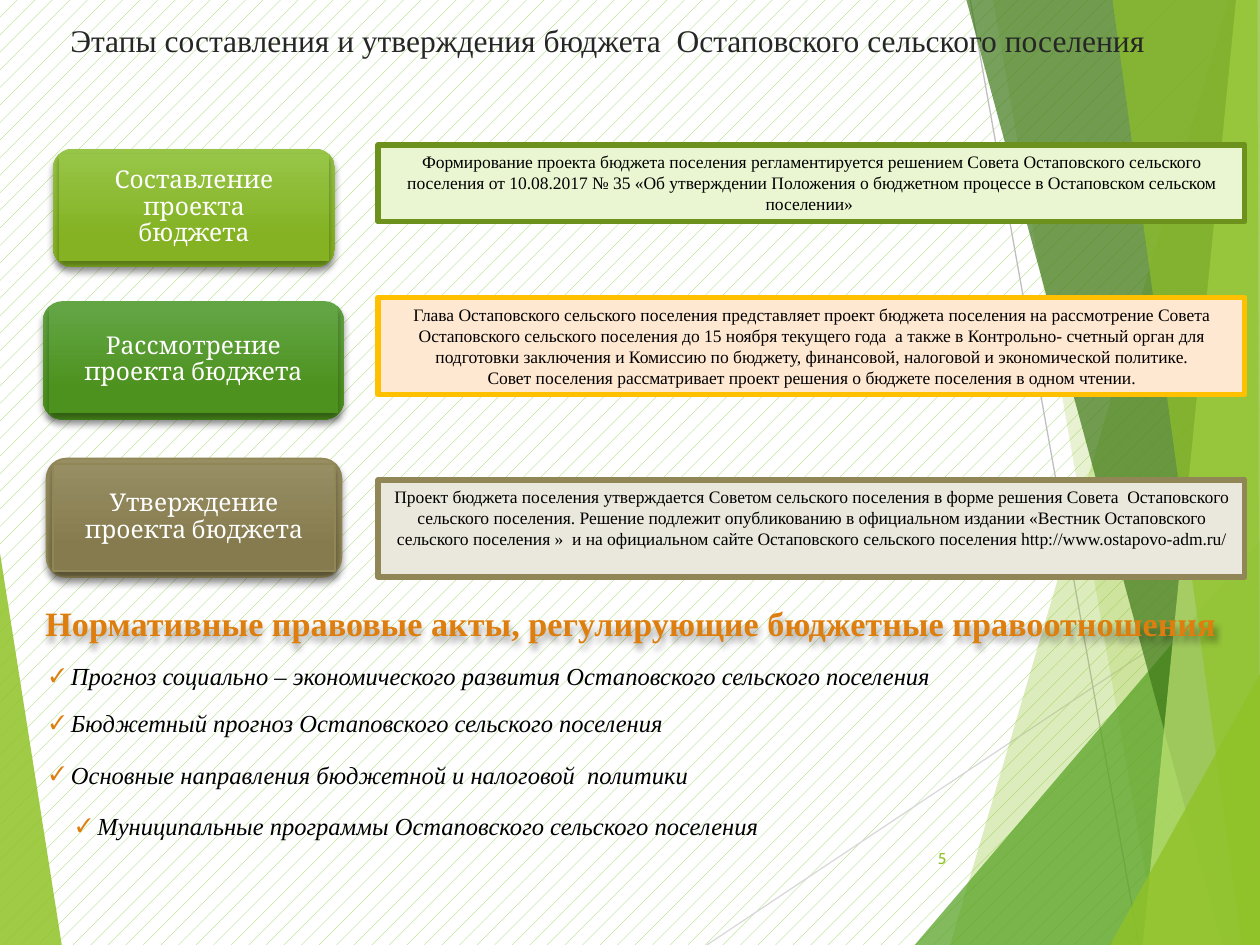
from lxml import etree
from pptx import Presentation
from pptx.dml.color import RGBColor
from pptx.enum.dml import MSO_PATTERN
from pptx.enum.shapes import MSO_CONNECTOR, MSO_SHAPE
from pptx.enum.text import MSO_ANCHOR, MSO_AUTO_SIZE, PP_ALIGN
from pptx.oxml import parse_xml
from pptx.oxml.ns import nsdecls, qn
from pptx.util import Inches, Pt

CENTER, RIGHT, LEFT, JUSTIFY = PP_ALIGN.CENTER, PP_ALIGN.RIGHT, PP_ALIGN.LEFT, PP_ALIGN.JUSTIFY
TOP, MIDDLE = MSO_ANCHOR.TOP, MSO_ANCHOR.MIDDLE
RECT, ROUND = MSO_SHAPE.RECTANGLE, MSO_SHAPE.ROUNDED_RECTANGLE
STRAIGHT = MSO_CONNECTOR.STRAIGHT
GROW = MSO_AUTO_SIZE.SHAPE_TO_FIT_TEXT
DOTS = MSO_PATTERN.PERCENT_5
SERIF = "Times New Roman"

COLORS = {
    "white": "FFFFFF", "black": "000000", "title": "262626", "orange": "DD7E0E",
    "pattern": "92D050", "lime": "90C226", "green": "54A021", "dark": "3F7819", "pale": "C0E474",
}

FACETS = [
    ("lime", 85, [(0, 4.39), (0.49, 7.5), (0, 7.5)]),
    ("lime", 30, [(9.75, 0), (7.54, 7.5), (10, 7.5), (10, 0)]),
    ("lime", 20, [(7.88, 0), (9.19, 7.5), (10, 7.5), (10, 0)]),
    ("green", 72, [(7.26, 7.5), (10, 4.29), (10, 7.5)]),
    ("dark", 70, [(7.67, 0), (9.7, 7.5), (10, 7.5), (10, 0)]),
    ("pale", 70, [(9.81, 0), (9.07, 7.5), (10, 7.5), (10, 0)]),
    ("lime", 65, [(8.83, 0), (9.86, 7.5), (10, 7.5), (9.98, 0)]),
    ("lime", 80, [(8.81, 7.5), (10, 5.35), (10, 7.5)]),
]
RAYS = [("D9D9D9", 5.61, 7.5, 10, 4.57), ("BFBFBF", 7.7, 0, 9.04, 7.5)]

STAGES = [
    ("Составление проекта бюджета", (0.42, 1.18, 2.24, 0.94), ("97C547", "84B223"), None,
     (3, 1.15, 6.88, 0.61), "EAF6D1", "6C921D",
     ["Формирование проекта бюджета поселения регламентируется решением Совета Остаповского "
      "сельского поселения от 10.08.2017 № 35 «Об утверждении Положения о бюджетном процессе "
      "в Остаповском сельском поселении» "]),
    ("Рассмотрение проекта бюджета", (0.34, 2.39, 2.39, 0.94), ("63A545", "4D921E"), None,
     (3, 2.36, 6.88, 0.77), "FFE8D1", "FFC000",
     ["Глава Остаповского сельского поселения представляет проект бюджета поселения на "
      "рассмотрение Совета Остаповского сельского поселения до 15 ноября текущего года  а также "
      "в Контрольно- счетный орган для подготовки заключения и Комиссию по бюджету, финансовой, "
      "налоговой и экономической политике.",
      "Совет поселения рассматривает проект решения о бюджете поселения в одном чтении."]),
    ("Утверждение проекта бюджета", (0.37, 3.64, 2.34, 0.94), ("988E64", "857B4E"), "918655",
     (3, 3.81, 6.88, 0.77), "EAE8DC", "918655",
     ["Проект бюджета поселения утверждается Советом сельского поселения в форме решения Совета  "
      "Остаповского сельского поселения. Решение подлежит опубликованию в официальном издании "
      "«Вестник Остаповского сельского поселения »  и на официальном сайте Остаповского сельского "
      "поселения http://www.ostapovo-adm.ru/"]),
]

ACTS = [
    (" Прогноз социально – экономического развития Остаповского сельского поселения",
     (0.3, 5.2, 9.25, 0.51), LEFT),
    (" Бюджетный прогноз Остаповского сельского поселения", (0.3, 5.57, 9.25, 0.51), LEFT),
    (" Основные направления бюджетной и налоговой  политики", (0.3, 5.98, 9.25, 0.51), JUSTIFY),
    (" Муниципальные программы Остаповского сельского поселения", (0.51, 6.39, 9.04, 0.45), LEFT),
]


def rgb(color):
    return RGBColor.from_string(COLORS.get(color, color))


def inches(box):
    return [Inches(v) for v in box]


def add_shadow(sp, blur=4, dist=3):
    props = sp._element.spPr
    for old in props.findall(qn("a:effectLst")):
        props.remove(old)
    props.append(parse_xml(
        f'<a:effectLst {nsdecls("a")}><a:outerShdw blurRad="{Pt(blur)}" dist="{Pt(dist)}" '
        f'dir="5400000" rotWithShape="0"><a:srgbClr val="000000"><a:alpha val="35000"/>'
        f'</a:srgbClr></a:outerShdw></a:effectLst>'))


def write(sp, lines, size, color, font=SERIF, align=CENTER, anchor=TOP):
    tf = sp.text_frame
    tf.word_wrap = True
    tf.vertical_anchor = anchor
    for i, line in enumerate(lines):
        p = tf.paragraphs[0] if i == 0 else tf.add_paragraph()
        p.alignment = align
        p.font.size, p.font.name = Pt(size), font
        p.font.color.rgb = rgb(color)
        p.add_run().text = line
    return tf


def add_text(s, box, text, size, color, **options):
    sp = s.shapes.add_textbox(*inches(box))
    write(sp, [text], size, color, **options)
    return sp


def add_block(s, kind, box, line=None, width=1):
    sp = s.shapes.add_shape(kind, *inches(box))
    sp.shadow.inherit = False
    if line:
        sp.line.color.rgb = rgb(line)
        sp.line.width = Pt(width)
    else:
        sp.line.fill.background()
    return sp


def add_facet(s, color, opacity, points):
    points = [inches(point) for point in points]
    builder = s.shapes.build_freeform(*points[0])
    builder.add_line_segments(points[1:])
    sp = builder.convert_to_shape()
    sp.shadow.inherit = False
    sp.line.fill.background()
    sp.fill.solid()
    sp.fill.fore_color.rgb = rgb(color)
    clr = sp._element.spPr.find(qn("a:solidFill"))[0]
    etree.SubElement(clr, qn("a:alpha")).set("val", str(opacity * 1000))


def add_ray(s, color, *ends):
    line = s.shapes.add_connector(STRAIGHT, *inches(ends))
    line.line.color.rgb = rgb(color)
    line.line.width = Pt(0.75)
    etree.SubElement(line._element.spPr, qn("a:effectLst"))


def add_backdrop(s):
    fill = s.background.fill
    fill.patterned()
    fill.pattern = DOTS
    fill.fore_color.rgb = rgb("pattern")
    fill.back_color.rgb = rgb("white")
    add_facet(s, *FACETS[0])
    for ray in RAYS:
        add_ray(s, *ray)
    for facet in FACETS[1:]:
        add_facet(s, *facet)


def add_stage_label(s, box, text, gradient, line):
    x, y, w, h = box
    inner = (x + 0.05, y + 0.04, w - 0.1, h - 0.09)
    for kind, area in ((ROUND, box), (RECT, inner)):
        sp = add_block(s, kind, area, line)
        sp.fill.gradient()
        sp.fill.gradient_angle = 270
        for stop, color, position in zip(sp.fill.gradient_stops, gradient, (0, 0.78)):
            stop.color.rgb = rgb(color)
            stop.position = position
        add_shadow(sp)
    tf = write(sp, [text], 14, "white", font="Cambria", anchor=MIDDLE)
    tf.margin_left = tf.margin_right = Inches(0.25)
    tf.margin_top = tf.margin_bottom = 0
    p = tf.paragraphs[0]
    p.line_spacing = 0.9
    p.space_after = Pt(4.9)


def add_stage_note(s, box, lines, fill, line):
    sp = add_block(s, RECT, box, line, 3)
    sp.fill.solid()
    sp.fill.fore_color.rgb = rgb(fill)
    write(sp, lines, 10, "black").auto_size = GROW


def add_heading(s, box, text):
    sp = add_text(s, box, text, 19.5, "orange", anchor=MIDDLE)
    sp.text_frame.paragraphs[0].font.bold = True
    add_shadow(sp)


def add_act(s, box, text, align):
    p = add_text(s, box, text, 14, "black", align=align).text_frame.paragraphs[0]
    p.font.italic = True
    p.space_before = Pt(2.8)
    pPr = p._p.get_or_add_pPr()
    pPr.set("marL", "0")
    pPr.set("indent", str(-Inches(0.2)))
    marks = parse_xml(
        f'<a:pPr {nsdecls("a")}><a:buClr><a:srgbClr val="{COLORS["orange"]}"/></a:buClr>'
        f'<a:buSzPct val="80000"/><a:buFont typeface="{SERIF}"/><a:buChar char="✓"/>'
        f'<a:tabLst><a:tab pos="{Inches(0.2)}" algn="l"/></a:tabLst></a:pPr>')
    defaults = pPr.find(qn("a:defRPr"))
    for mark in list(marks):
        defaults.addprevious(mark)


def main():
    prs = Presentation()
    prs.slide_width, prs.slide_height = Inches(10), Inches(7.5)
    s = prs.slides.add_slide(prs.slide_layouts[6])
    add_backdrop(s)
    add_text(s, (0.18, 0.12, 9.29, 0.79),
             "Этапы составления и утверждения бюджета  Остаповского сельского поселения", 18, "title")
    add_text(s, (7.05, 6.61, 0.56, 0.4), "5", 9, "lime", font="Cabin", align=RIGHT, anchor=MIDDLE)
    for label, label_box, gradient, edge, note_box, fill, line, note in STAGES:
        add_stage_label(s, label_box, label, gradient, edge)
        add_stage_note(s, note_box, note, fill, line)
    add_heading(s, (0.13, 4.58, 9.76, 0.72),
                "Нормативные правовые акты, регулирующие бюджетные правоотношения")
    for text, box, align in ACTS:
        add_act(s, box, text, align)
    prs.save("out.pptx")


if __name__ == "__main__":
    main()
